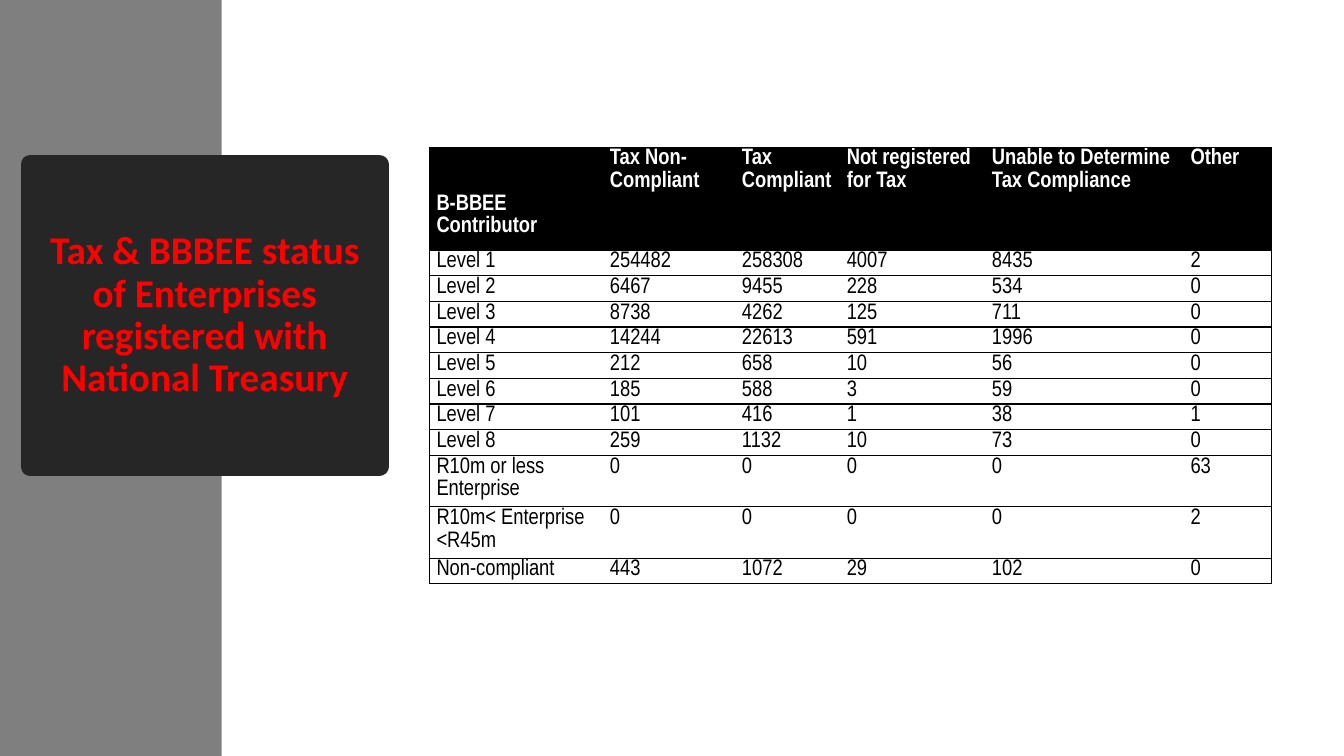
from dataclasses import dataclass

from lxml import etree
from pptx import Presentation
from pptx import util as u
from pptx.dml.color import RGBColor
from pptx.enum import shapes, text
from pptx.oxml import ns


@dataclass(frozen=True)
class Theme:
    black: str = "000000"
    white: str = "FFFFFF"
    side: str = "7F7F7F"
    panel: str = "262626"
    accent: str = "FF0000"
    head_font: str = "Calibri"
    body_font: str = "Arial Narrow"
    head_size: int = 28
    body_size: int = 16
    frame: float = 13.75
    rule: float = 1


def write(frame, words, font, size, color, bold=False, align=text.PP_ALIGN.LEFT, gap=1.0):
    para = frame.paragraphs[0]
    para.alignment = align
    para.line_spacing = gap
    run = para.add_run()
    run.text = words
    run.font.name = font
    run.font.size = u.Pt(size)
    run.font.bold = bold
    run.font.color.rgb = RGBColor.from_string(color)


def paint(fill, color):
    fill.solid()
    fill.fore_color.rgb = RGBColor.from_string(color)


def edge(cell, side, color, width):
    """Draw one border of a cell, or clear it when color is None."""
    props = cell._tc.get_or_add_tcPr()
    line = etree.SubElement(props, ns.qn(f"a:ln{side}"), w=str(u.Pt(width)))
    if color is None:
        etree.SubElement(line, ns.qn("a:noFill"))
    else:
        fill = etree.SubElement(line, ns.qn("a:solidFill"))
        etree.SubElement(fill, ns.qn("a:srgbClr"), val=color)


class Maker:
    def __init__(self, slide, theme):
        self.slide = slide
        self.theme = theme

    def block(self, left, top, width, height, color):
        box = self.slide.shapes.add_shape(
            shapes.MSO_SHAPE.RECTANGLE, *map(u.Inches, (left, top, width, height)))
        box.shadow.inherit = False
        paint(box.fill, color)
        box.line.fill.background()

    def title(self, words, left, top, width, height):
        """Format the title as a framed panel in front of earlier shapes."""
        look = self.theme
        panel = self.slide.shapes.title
        self.slide.shapes.element.append(panel.element)
        panel.left, panel.top = u.Inches(left), u.Inches(top)
        panel.width, panel.height = u.Inches(width), u.Inches(height)
        paint(panel.fill, look.panel)
        paint(panel.line.fill, look.panel)
        panel.line.width = u.Pt(look.frame)
        etree.SubElement(panel.line._ln, ns.qn("a:round"))
        frame = panel.text_frame
        frame.word_wrap = True
        frame.auto_size = text.MSO_AUTO_SIZE.NONE
        frame.vertical_anchor = text.MSO_ANCHOR.MIDDLE
        write(frame, words, look.head_font, look.head_size, look.accent,
              bold=True, align=text.PP_ALIGN.CENTER, gap=0.9)

    def table(self, rows, left, top, widths, heights):
        grid = self.slide.shapes.add_table(
            len(rows), len(widths), u.Inches(left), u.Inches(top),
            u.Inches(sum(widths)), u.Inches(sum(heights))).table
        grid.horz_banding = False
        for col, width in zip(grid.columns, widths):
            col.width = u.Inches(width)
        for r, (row, height) in enumerate(zip(rows, heights)):
            grid.rows[r].height = u.Inches(height)
            for c, words in enumerate(row):
                self.cell(grid.cell(r, c), words, head=r == 0,
                          first=c == 0, last=c == len(row) - 1)
        return grid

    def cell(self, cell, words, head, first, last):
        look = self.theme
        cell.margin_left = cell.margin_right = u.Inches(0.07)
        cell.margin_top = cell.margin_bottom = 0
        for side, shown in (("L", first), ("R", last), ("T", True), ("B", True)):
            edge(cell, side, look.black if shown else None, look.rule)
        paint(cell.fill, look.black if head else look.white)
        write(cell.text_frame, words, look.body_font, look.body_size,
              look.white if head else look.black, bold=head, gap=1.07)


ROWS = [
    ("B-BBEE Contributor", "Tax Non-Compliant", "Tax Compliant",
     "Not registered for Tax", "Unable to Determine Tax Compliance", "Other"),
    ("Level 1", "254482", "258308", "4007", "8435", "2"),
    ("Level 2", "6467", "9455", "228", "534", "0"),
    ("Level 3", "8738", "4262", "125", "711", "0"),
    ("Level 4", "14244", "22613", "591", "1996", "0"),
    ("Level 5", "212", "658", "10", "56", "0"),
    ("Level 6", "185", "588", "3", "59", "0"),
    ("Level 7", "101", "416", "1", "38", "1"),
    ("Level 8", "259", "1132", "10", "73", "0"),
    ("R10m or less Enterprise", "0", "0", "0", "0", "63"),
    ("R10m< Enterprise <R45m", "0", "0", "0", "0", "2"),
    ("Non-compliant", "443", "1072", "29", "102", "0"),
]
WIDTHS = (1.72, 1.31, 1.04, 1.44, 1.97, 0.87)
HEAD = 1.02
UNITS = (4, *[1] * 8, 2, 2, 1)  # row heights in quarters of the header


def main():
    deck = Presentation()
    deck.slide_width, deck.slide_height = u.Inches(13.33), u.Inches(7.5)
    make = Maker(deck.slides.add_slide(deck.slide_layouts[5]), Theme())
    make.block(0, 0, 2.2, 7.5, make.theme.side)
    make.title("Tax & BBBEE status of Enterprises registered with National Treasury",
               0.3, 1.63, 3.46, 3)
    grid = make.table(ROWS, 4.26, 1.46, WIDTHS, [HEAD * n / 4 for n in UNITS])
    grid.cell(0, 0).margin_top = u.Inches(0.45)
    deck.save("out.pptx")


if __name__ == "__main__":
    main()
